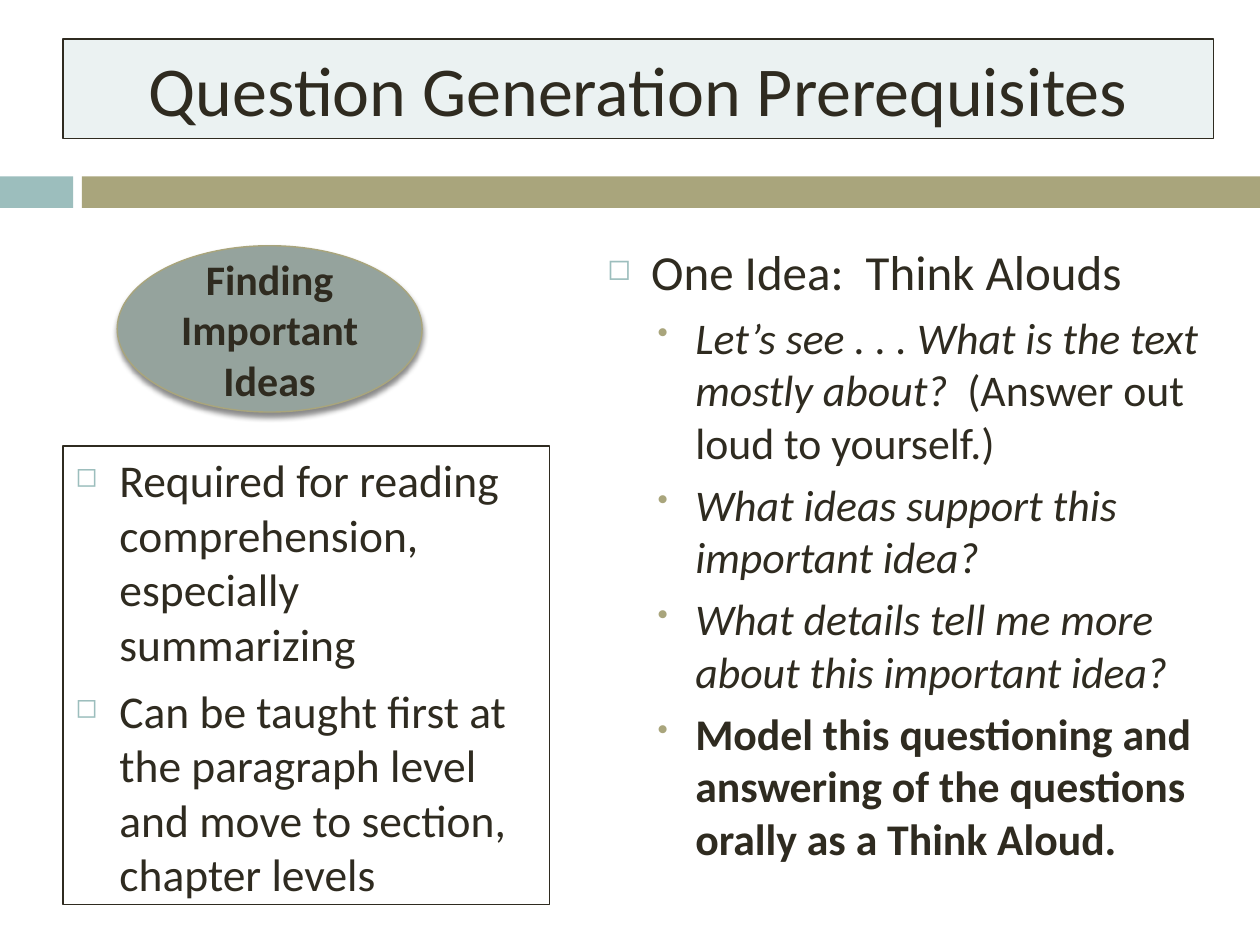
"""Build the slide on prerequisites for question generation."""
import lxml.etree
import pptx
import pptx.dml.color
import pptx.enum.shapes
import pptx.enum.text
import pptx.oxml.ns
import pptx.util

INK, TEAL, OLIVE, SAGE, MIST = "2F2B20", "9CBEBD", "A9A57C", "95A39D", "EBF2F2"
FONT = "Calibri"
WIDTH, HEIGHT = 10, 7.5
MARGIN, BAND_TOP, BAND_HEIGHT, BAND_SPLIT = 0.5, 1.4, 0.25, 0.65
BODY_BOTTOM = 7.18

TITLE = "Question Generation Prerequisites"
TOPIC = "Finding Important Ideas"
REASONS = [
    (0, 26, [("Required for reading comprehension, especially summarizing", "")]),
    (0, 26, [("Can be taught first at the paragraph level and move to section, chapter levels", "")]),
]
THINK_ALOUDS = [
    (0, 28, [("One Idea:  Think Alouds", "")]),
    (1, 25, [("Let’s see . . . What is the text mostly about?  ", "i"),
             ("(Answer out loud to yourself.)", "")]),
    (1, 25, [("What ideas support this important idea?", "i")]),
    (1, 25, [("What details tell me more about this important idea?", "i")]),
    (1, 25, [("Model this questioning and answering of the questions orally as a Think Aloud.", "b")]),
]
LEVELS = [
    {"char": "◻", "color": TEAL, "size": 60, "left": 0.35, "hang": 0.35, "before": 7},
    {"char": "•", "color": OLIVE, "size": 70, "left": 0.7, "hang": 0.3, "before": 5.5},
]


def rgb(value):
    """Turn a hex string into a colour."""
    return pptx.dml.color.RGBColor.from_string(value)


def add_node(parent, tag, **attributes):
    """Append a DrawingML element and return it."""
    node = lxml.etree.SubElement(parent, pptx.oxml.ns.qn(tag))
    for key, value in attributes.items():
        node.set(key, str(value))
    return node


def add_box(slide, kind, left, top, width, height, fill=None, line=None, weight=0.75):
    """Add a preset shape without shadow, with optional fill and outline."""
    box = slide.shapes.add_shape(kind, *map(pptx.util.Inches, (left, top, width, height)))
    box.shadow.inherit = False
    if fill:
        box.fill.solid()
        box.fill.fore_color.rgb = rgb(fill)
    else:
        box.fill.background()
    if line:
        box.line.color.rgb = rgb(line)
        box.line.width = pptx.util.Pt(weight)
    else:
        box.line.fill.background()
    return box


def add_run(paragraph, text, size, style=""):
    """Add a run of text; style holds b for bold and i for italic."""
    run = paragraph.add_run()
    run.text = text
    run.font.name = FONT
    run.font.size = pptx.util.Pt(size)
    run.font.bold = "b" in style
    run.font.italic = "i" in style
    run.font.color.rgb = rgb(INK)


def write_label(box, text, size, style=""):
    """Write one centred line of thought in the middle of a shape."""
    frame = box.text_frame
    frame.word_wrap = True
    frame.vertical_anchor = pptx.enum.text.MSO_ANCHOR.MIDDLE
    paragraph = frame.paragraphs[0]
    paragraph.alignment = pptx.enum.text.PP_ALIGN.CENTER
    add_run(paragraph, text, size, style)


def write_bullets(box, items):
    """Fill a shape with bulleted paragraphs."""
    frame = box.text_frame
    frame.word_wrap = True
    frame.vertical_anchor = pptx.enum.text.MSO_ANCHOR.TOP
    for index, (depth, size, runs) in enumerate(items):
        paragraph = frame.add_paragraph() if index else frame.paragraphs[0]
        level = LEVELS[depth]
        paragraph.level = depth
        paragraph.alignment = pptx.enum.text.PP_ALIGN.LEFT
        paragraph.space_before = pptx.util.Pt(level["before"])
        for text, style in runs:
            add_run(paragraph, text, size, style)
        properties = paragraph._p.get_or_add_pPr()
        properties.set("marL", str(pptx.util.Inches(level["left"])))
        properties.set("indent", str(-pptx.util.Inches(level["hang"])))
        add_node(add_node(properties, "a:buClr"), "a:srgbClr", val=level["color"])
        add_node(properties, "a:buSzPct", val=level["size"] * 1000)
        add_node(properties, "a:buChar", char=level["char"])


def add_drop_shadow(box, opacity, blur, distance):
    """Give a shape a soft black shadow straight below it."""
    effects = box._element.spPr.find(pptx.oxml.ns.qn("a:effectLst"))
    shadow = add_node(effects, "a:outerShdw", blurRad=pptx.util.Pt(blur),
                      dist=pptx.util.Pt(distance), dir=90 * 60000, rotWithShape=0)
    add_node(add_node(shadow, "a:srgbClr", val="000000"), "a:alpha", val=opacity * 1000)


def main():
    """Lay out the slide and save it."""
    deck = pptx.Presentation()
    deck.slide_width, deck.slide_height = pptx.util.Inches(WIDTH), pptx.util.Inches(HEIGHT)
    slide = deck.slides.add_slide(deck.slide_layouts[6])
    rectangle = pptx.enum.shapes.MSO_SHAPE.RECTANGLE
    oval = pptx.enum.shapes.MSO_SHAPE.OVAL

    add_box(slide, rectangle, 0, BAND_TOP, 0.58, BAND_HEIGHT, TEAL)
    add_box(slide, rectangle, BAND_SPLIT, BAND_TOP, WIDTH - BAND_SPLIT, BAND_HEIGHT, OLIVE)

    reasons_top, thinking_top = 3.54, 1.87
    reasons = add_box(slide, rectangle, MARGIN, reasons_top, 3.86, BODY_BOTTOM - reasons_top, line=INK)
    write_bullets(reasons, REASONS)

    heading = add_box(slide, rectangle, MARGIN, 0.31, 9.13, 0.79, MIST, INK)
    write_label(heading, TITLE, 40)

    thinking = slide.shapes.add_textbox(
        *map(pptx.util.Inches, (4.72, thinking_top, 4.92, BODY_BOTTOM - thinking_top)))
    write_bullets(thinking, THINK_ALOUDS)

    topic = add_box(slide, oval, 0.93, 1.95, 2.42, 1.32, SAGE, OLIVE, 0.79)
    add_drop_shadow(topic, 45, 3, 2.4)
    write_label(topic, TOPIC, 24, "b")

    deck.save("out.pptx")


if __name__ == "__main__":
    main()
